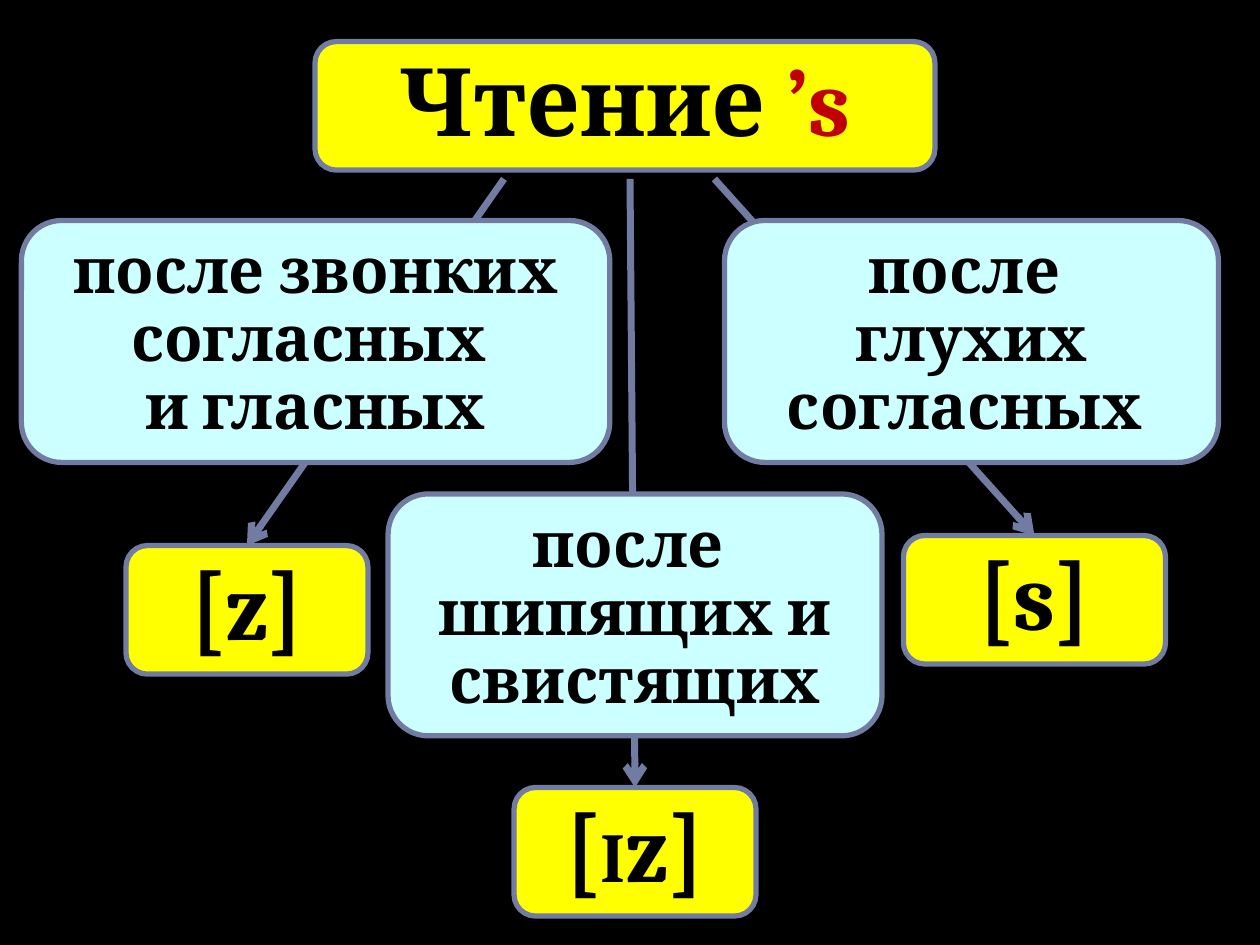
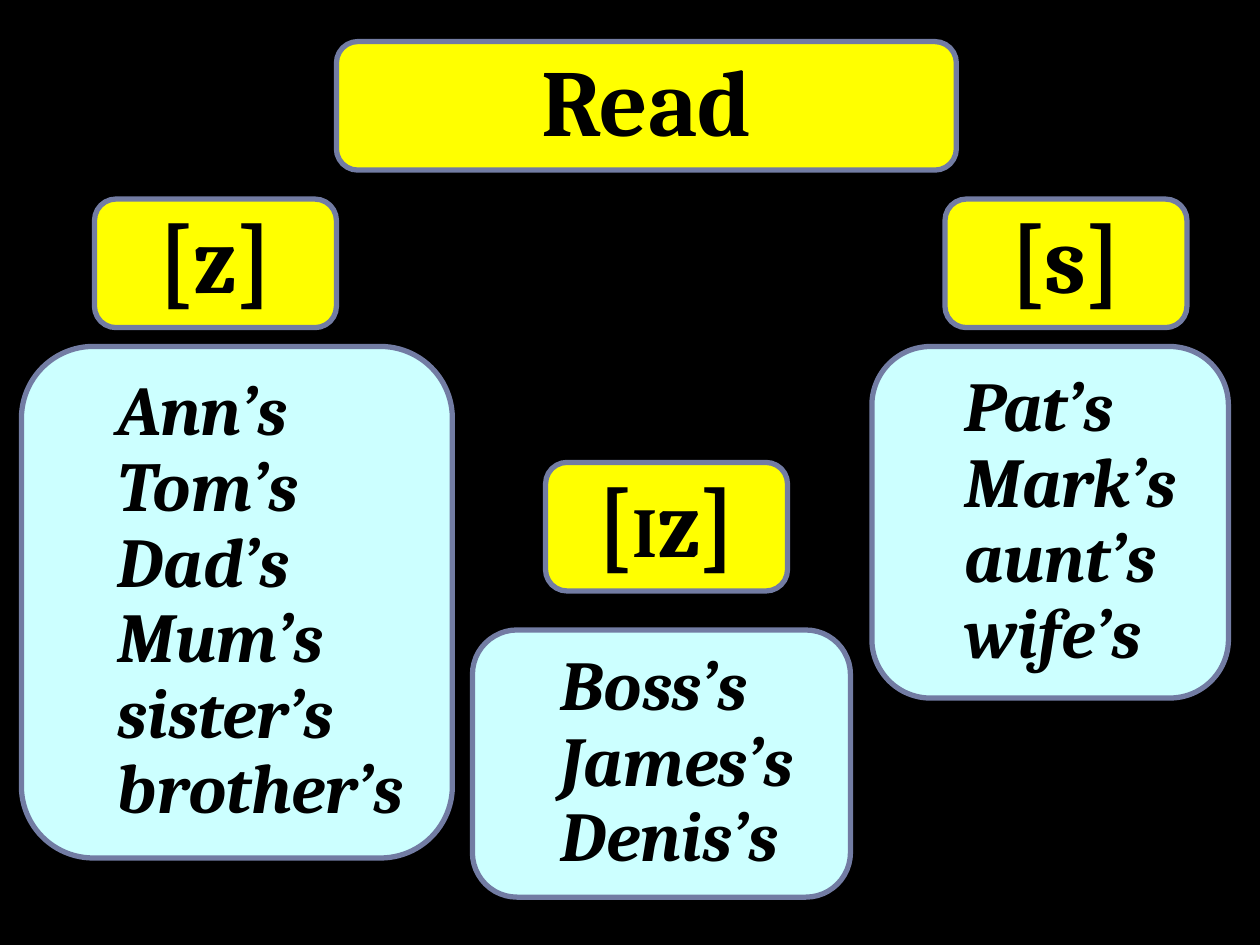
"""Build two slides on how the English possessive ’s is read."""
from pptx import Presentation
from pptx.dml.color import RGBColor
from pptx.enum.shapes import MSO_CONNECTOR, MSO_SHAPE
from pptx.enum.text import MSO_ANCHOR, MSO_AUTO_SIZE, PP_ALIGN
from pptx.oxml.ns import qn
from pptx.util import Inches, Pt
from lxml.etree import SubElement

FONT = "Cambria"
BLACK, RED = "000000", "C00000"
YELLOW, CYAN, SLATE = "FFFF00", "CCFFFF", "727CA3"

HEADING_SIZE, SMALL_I_SIZE, CONDITION_SIZE, WORD_SIZE = 54, 40, 36, 40
BAND_TOP, BAND_WIDTH, BAND_HEIGHT = 0.33, 4.92, 1.02
SOUND_WIDTH = 1.92
CONDITION_HEIGHT = 1.92
WORD_INDENT = 0.5

Z = [("[z]", HEADING_SIZE, BLACK)]
S = [("[s]", HEADING_SIZE, BLACK)]
IZ = [("[", HEADING_SIZE, BLACK), ("I", SMALL_I_SIZE, BLACK), ("z]", HEADING_SIZE, BLACK)]

RULES = {
    "title": (2.5, [("Чтение ", HEADING_SIZE, BLACK), ("’s", HEADING_SIZE, RED)]),
    "sounds": [(1, 4.33, SOUND_WIDTH, Z), (7.17, 4.25, 2.08, S), (4.08, 6.25, SOUND_WIDTH, IZ)],
    "arrow_starts": [4, 5.67, 5],
    "arrow_top": 1.42,
    "conditions": [
        (0.17, 1.75, 4.67, ["после звонких согласных ", "и гласных"]),
        (5.75, 1.75, 3.92, ["после ", "глухих согласных "]),
        (3.08, 3.92, 3.92, ["после ", "шипящих и свистящих"]),
    ],
}

READING = {
    "title": (2.67, [("Read", HEADING_SIZE, BLACK)]),
    "sounds": [(0.75, 1.58, SOUND_WIDTH, Z), (7.5, 1.58, SOUND_WIDTH, S), (4.33, 3.67, SOUND_WIDTH, IZ)],
    "words": [
        (0.17, 2.75, 3.42, 4.06, ["Ann’s", "Tom’s", "Dad’s", "Mum’s", "sister’s", "brother’s"]),
        (6.92, 2.75, 2.83, 2.79, ["Pat’s", "Mark’s", "aunt’s", "wife’s"]),
        (3.75, 5, 3, 2.12, ["Boss’s", "James’s", "Denis’s"]),
    ],
}


def color(hex_code):
    """Turn a hex string into a colour."""
    return RGBColor.from_string(hex_code)


def add_box(slide, left, top, width, height, fill, paragraphs, as_list=False):
    """Add an outlined rounded box whose paragraphs are lists of (text, size, colour)."""
    shape = slide.shapes.add_shape(
        MSO_SHAPE.ROUNDED_RECTANGLE, Inches(left), Inches(top), Inches(width), Inches(height))
    shape.shadow.inherit = False
    shape.fill.solid()
    shape.fill.fore_color.rgb = color(fill)
    shape.line.color.rgb = color(SLATE)
    shape.line.width = Pt(3)
    frame = shape.text_frame
    frame.word_wrap = True
    frame.auto_size = MSO_AUTO_SIZE.SHAPE_TO_FIT_TEXT
    frame.vertical_anchor = MSO_ANCHOR.MIDDLE
    frame.text = "\n".join("" for _ in paragraphs)
    for paragraph, runs in zip(frame.paragraphs, paragraphs):
        paragraph.line_spacing = 0.9
        paragraph.alignment = PP_ALIGN.LEFT if as_list else PP_ALIGN.CENTER
        if as_list:
            paragraph.level = 1
            properties = paragraph._p.get_or_add_pPr()
            properties.set("marL", str(Inches(WORD_INDENT)))
            properties.set("indent", "0")
        for text, size, text_color in runs:
            run = paragraph.add_run()
            run.text = text
            run.font.name = FONT
            run.font.size = Pt(size)
            run.font.bold = True
            run.font.italic = as_list
            run.font.color.rgb = color(text_color)


def add_arrow(slide, start, end):
    """Add a straight arrow between two points."""
    arrow = slide.shapes.add_connector(
        MSO_CONNECTOR.STRAIGHT, *(Inches(value) for value in (*start, *end)))
    arrow.line.color.rgb = color(SLATE)
    arrow.line.width = Pt(4)
    SubElement(arrow.line._get_or_add_ln(), qn("a:tailEnd"), type="arrow")
    SubElement(arrow._element.spPr, qn("a:effectLst"))


def add_slide(presentation, content):
    """Add a black slide with its title band and sound labels."""
    slide = presentation.slides.add_slide(presentation.slide_layouts[6])
    slide.background.fill.solid()
    slide.background.fill.fore_color.rgb = color(BLACK)
    left, title = content["title"]
    add_box(slide, left, BAND_TOP, BAND_WIDTH, BAND_HEIGHT, YELLOW, [title])
    for left, top, width, sound in content["sounds"]:
        add_box(slide, left, top, width, BAND_HEIGHT, YELLOW, [sound])
    return slide


def add_rules_slide(presentation):
    """Link the title to each sound, passing behind its condition."""
    slide = add_slide(presentation, RULES)
    for start, (left, top, width, _) in zip(RULES["arrow_starts"], RULES["sounds"]):
        add_arrow(slide, (start, RULES["arrow_top"]), (left + width / 2, top))
    for left, top, width, lines in RULES["conditions"]:
        paragraphs = [[(line, CONDITION_SIZE, BLACK)] for line in lines]
        add_box(slide, left, top, width, CONDITION_HEIGHT, CYAN, paragraphs)


def add_reading_slide(presentation):
    """List the words to read under each sound."""
    slide = add_slide(presentation, READING)
    for left, top, width, height, words in READING["words"]:
        paragraphs = [[(word, WORD_SIZE, BLACK)] for word in words]
        add_box(slide, left, top, width, height, CYAN, paragraphs, as_list=True)


def main():
    """Build and save the presentation."""
    presentation = Presentation()
    presentation.slide_width = Inches(10)
    presentation.slide_height = Inches(7.5)
    add_rules_slide(presentation)
    add_reading_slide(presentation)
    presentation.save("out.pptx")


if __name__ == "__main__":
    main()
